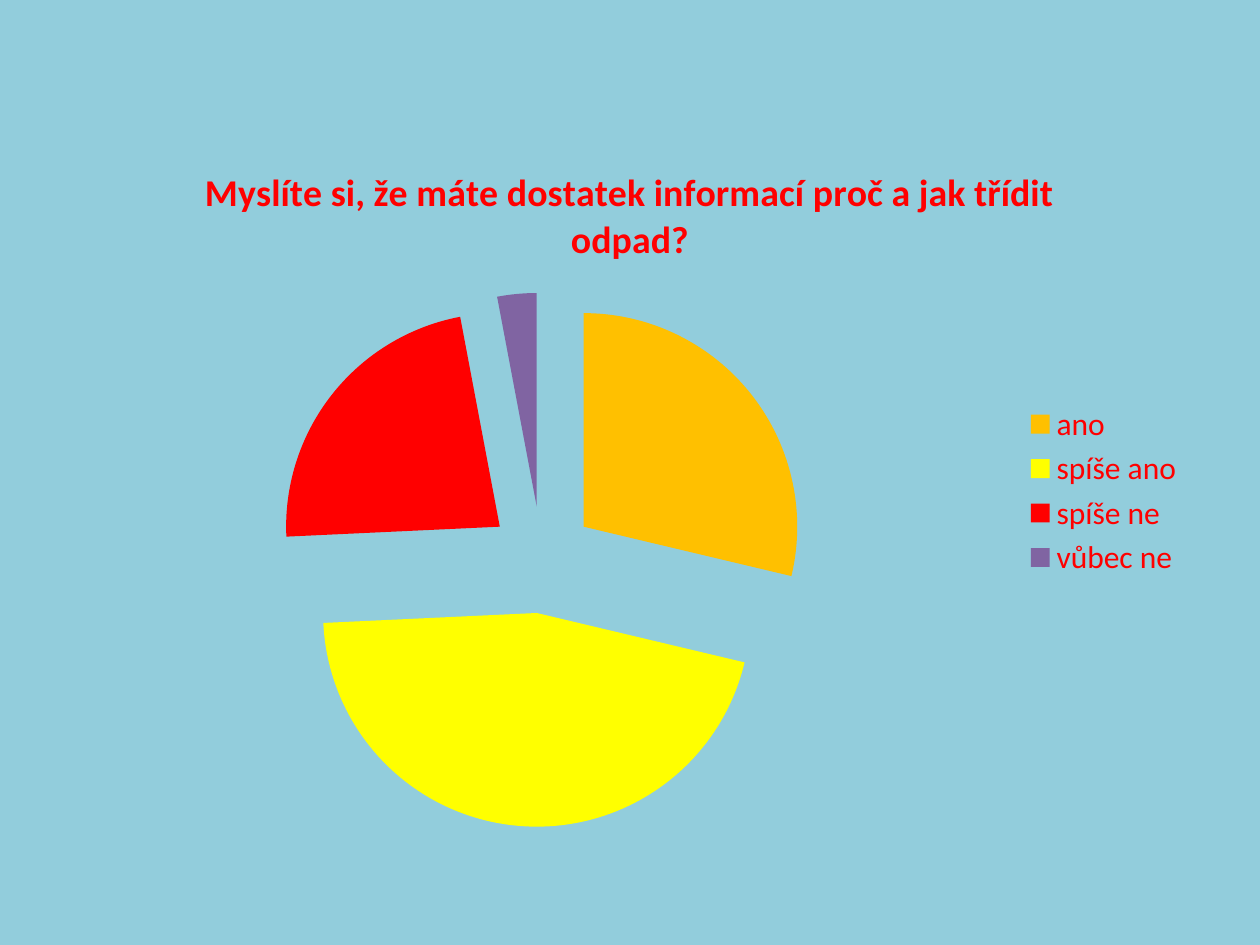
from pptx import Presentation, util as u
from pptx.chart import data
from pptx.dml import color
from pptx.enum import chart as ec
from pptx.oxml import parse_xml
from pptx.oxml import ns

Pt = u.Pt


def paint(fill, tone):
    fill.solid()
    fill.fore_color.rgb = color.RGBColor.from_string(tone)


def style(font, size, tone, bold=False):
    font.name = "Calibri"
    font.size = Pt(size)
    font.bold = bold
    paint(font.fill, tone)


deck = Presentation()
deck.slide_width, deck.slide_height = Pt(720), Pt(540)
slide = deck.slides.add_slide(deck.slide_layouts[6])
paint(slide.background.fill, "92CDDC")

quest = "Myslíte si, že máte dostatek informací proč a jak třídit odpad?"
votes = [
    ("ano", 29, "FFC000"),
    ("spíše ano", 46, "FFFF00"),
    ("spíše ne", 23, "FF0000"),
    ("vůbec ne", 3, "8064A2"),
]
table = data.CategoryChartData()
table.categories = [name for name, count, tone in votes]
table.add_series(quest, [count for name, count, tone in votes])

frame = slide.shapes.add_chart(
    ec.XL_CHART_TYPE.PIE, Pt(36), Pt(78.5), Pt(648), Pt(404), table
)
pie = frame.chart
style(pie.font, 18, "92D050")

pie.has_title = True
title = pie.chart_title.text_frame
title.text = quest
style(title.paragraphs[0].runs[0].font, 21.6, "FF0000", True)
pie.chart_title.include_in_layout = False

pie.has_legend = True
pie.legend.position = ec.XL_LEGEND_POSITION.RIGHT
pie.legend.include_in_layout = False
style(pie.legend.font, 18, "FF0000")

plot = pie.plots[0]
plot.vary_by_categories = True
ring = plot.series[0]
for i, (name, count, tone) in enumerate(votes):
    paint(ring.points[i].format.fill, tone)

burst = parse_xml(f'<c:explosion {ns.nsdecls("c")} val="25"/>')
ring._element.find(ns.qn("c:dPt")).addprevious(burst)

deck.save("out.pptx")
